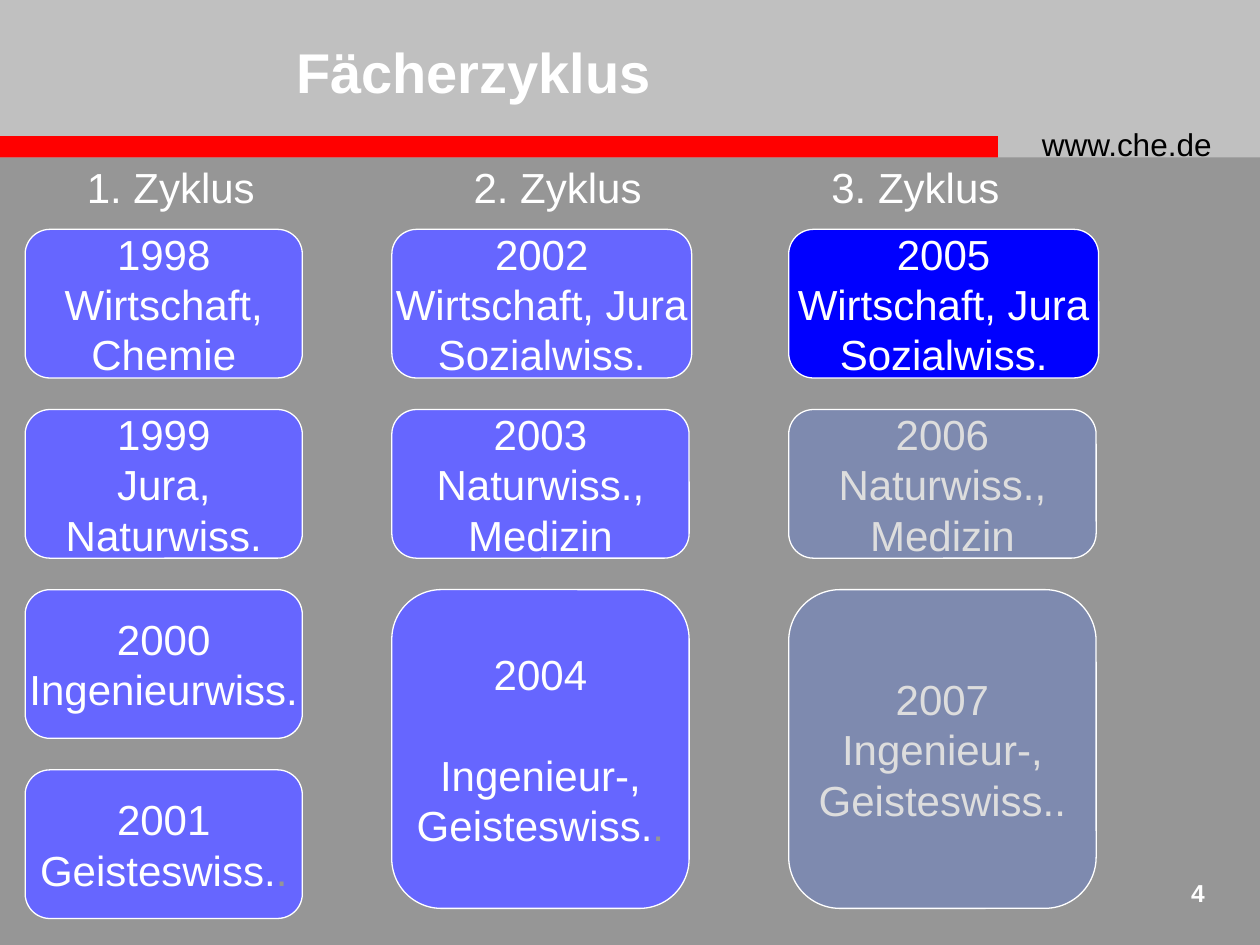
from lxml import etree
from pptx import Presentation
from pptx.dml.color import RGBColor
from pptx.enum.shapes import MSO_SHAPE
from pptx.enum.text import MSO_ANCHOR, MSO_AUTO_SIZE, PP_ALIGN
from pptx.oxml.ns import qn
from pptx.util import Inches, Pt

RECT, ROUNDED = MSO_SHAPE.RECTANGLE, MSO_SHAPE.ROUNDED_RECTANGLE
LEFT, CENTER, RIGHT = PP_ALIGN.LEFT, PP_ALIGN.CENTER, PP_ALIGN.RIGHT
TOP, MIDDLE = MSO_ANCHOR.TOP, MSO_ANCHOR.MIDDLE
NO_FIT = MSO_AUTO_SIZE.NONE

COLORS = {
    "background": "969696",
    "band": "C0C0C0",
    "rule": "FF0000",
    "past": "6666FF",
    "current": "0000FF",
    "future": "3366FF",
    "white": "FFFFFF",
    "pale": "DDDDDD",
    "black": "000000",
}
FUTURE_OPACITY = 24
TITLE_ONLY = 5
FIRST_ROW, ROW_PITCH = 1.82, 1.43
CARD_HEIGHT, TALL_HEIGHT = 1.18, 2.53
BLANK_LINE = 28.8

CYCLES = [
    (0.59, "1. Zyklus", 0.2, [
        (2.2, CARD_HEIGHT, "past", ["1998", "Wirtschaft,", "Chemie"]),
        (2.2, CARD_HEIGHT, "past", ["1999", "Jura,", "Naturwiss."]),
        (2.2, CARD_HEIGHT, "past", ["2000", "Ingenieurwiss."]),
        (2.2, CARD_HEIGHT, "past", ["2001", "Geisteswiss.."]),
    ]),
    (3.66, "2. Zyklus", 3.11, [
        (2.38, CARD_HEIGHT, "past", ["2002", "Wirtschaft, Jura", "Sozialwiss."]),
        (2.36, CARD_HEIGHT, "past", ["2003", "Naturwiss.,", "Medizin"]),
        (2.36, TALL_HEIGHT, "past", ["2004", "Ingenieur-,", "Geisteswiss.."]),
    ]),
    (6.5, "3. Zyklus", 6.26, [
        (2.46, CARD_HEIGHT, "current", ["2005", "Wirtschaft, Jura", "Sozialwiss."]),
        (2.44, CARD_HEIGHT, "future", ["2006", "Naturwiss.,", "Medizin"]),
        (2.44, TALL_HEIGHT, "future", ["2007", "Ingenieur-,", "Geisteswiss.."]),
    ]),
]


def rgb(name):
    return RGBColor.from_string(COLORS[name])


def inches(box):
    return [Inches(length) for length in box]


def style(para, size, color, align=LEFT, bold=False):
    para.alignment = align
    para.font.name = "Arial"
    para.font.size = Pt(size)
    para.font.bold = bold
    para.font.color.rgb = rgb(color)


def add_label(page, box, text, size, color, align=LEFT, bold=False):
    frame = page.shapes.add_textbox(*inches(box)).text_frame
    frame.word_wrap = True
    frame.text = text
    style(frame.paragraphs[0], size, color, align, bold)


def add_block(page, kind, box, color):
    shape = page.shapes.add_shape(kind, *inches(box))
    shape.shadow.inherit = False
    shape.fill.solid()
    shape.fill.fore_color.rgb = rgb(color)
    shape.line.fill.background()
    return shape


def set_opacity(shape, percent):
    color = shape.element.spPr.find(qn("a:solidFill"))[0]
    etree.SubElement(color, qn("a:alpha")).set("val", str(percent * 1000))


def add_header(page, box):
    left, top, width, height = box
    add_block(page, RECT, box, "band")
    add_block(page, RECT, (left - 0.01, top + height - 0.17, 7.93, 0.17), "rule")
    add_label(page, (left + 8.17, top + 0.94, 1.75, 0.4), "www.che.de", 18, "black")

    title = page.shapes.title
    title.left, title.top, title.width, title.height = inches(
        (left + 2.25, top + 0.25, 4.5, 0.63))
    frame = title.text_frame
    frame.text = "Fächerzyklus"
    frame.vertical_anchor = TOP
    frame.auto_size = NO_FIT
    style(frame.paragraphs[0], 32, "white", bold=True)
    page.shapes.element.append(title.element)


def add_card(page, box, state, lines):
    card = add_block(page, ROUNDED, box, state)
    card.adjustments[0] = 0.167
    card.line.color.rgb = rgb("white")
    card.line.width = Pt(0.75)
    if state == "future":
        set_opacity(card, FUTURE_OPACITY)

    frame = card.text_frame
    frame.word_wrap = False
    frame.vertical_anchor = MIDDLE
    for number, line in enumerate(lines):
        para = frame.paragraphs[0] if number == 0 else frame.add_paragraph()
        style(para, 24, "pale" if state == "future" else "white", CENTER)
        faded_dot = state == "past" and line.endswith("..")
        para.add_run().text = line[:-1] if faded_dot else line
        if faded_dot:
            span = para.add_run()
            span.text = "."
            span.font.color.rgb = rgb("background")
    if state == "past" and box[3] == TALL_HEIGHT:
        frame.paragraphs[1].space_before = Pt(BLANK_LINE)


def add_cycle(page, label_left, label, left, cards):
    add_label(page, (label_left, 1.23, 1.65, 0.5), label, 24, "white")
    for row, (width, height, state, lines) in enumerate(cards):
        box = (left, FIRST_ROW + row * ROW_PITCH, width, height)
        add_card(page, box, state, lines)


def main():
    deck = Presentation()
    deck.slide_width, deck.slide_height = Inches(10), Inches(7.5)
    page = deck.slides.add_slide(deck.slide_layouts[TITLE_ONLY])
    page.background.fill.solid()
    page.background.fill.fore_color.rgb = rgb("background")

    add_header(page, (0, 0, 10, 1.25))
    for cycle in CYCLES:
        add_cycle(page, *cycle)
    add_label(page, (9.08, 6.92, 0.58, 0.42), "4", 14, "white", RIGHT, bold=True)
    deck.save("out.pptx")


if __name__ == "__main__":
    main()
